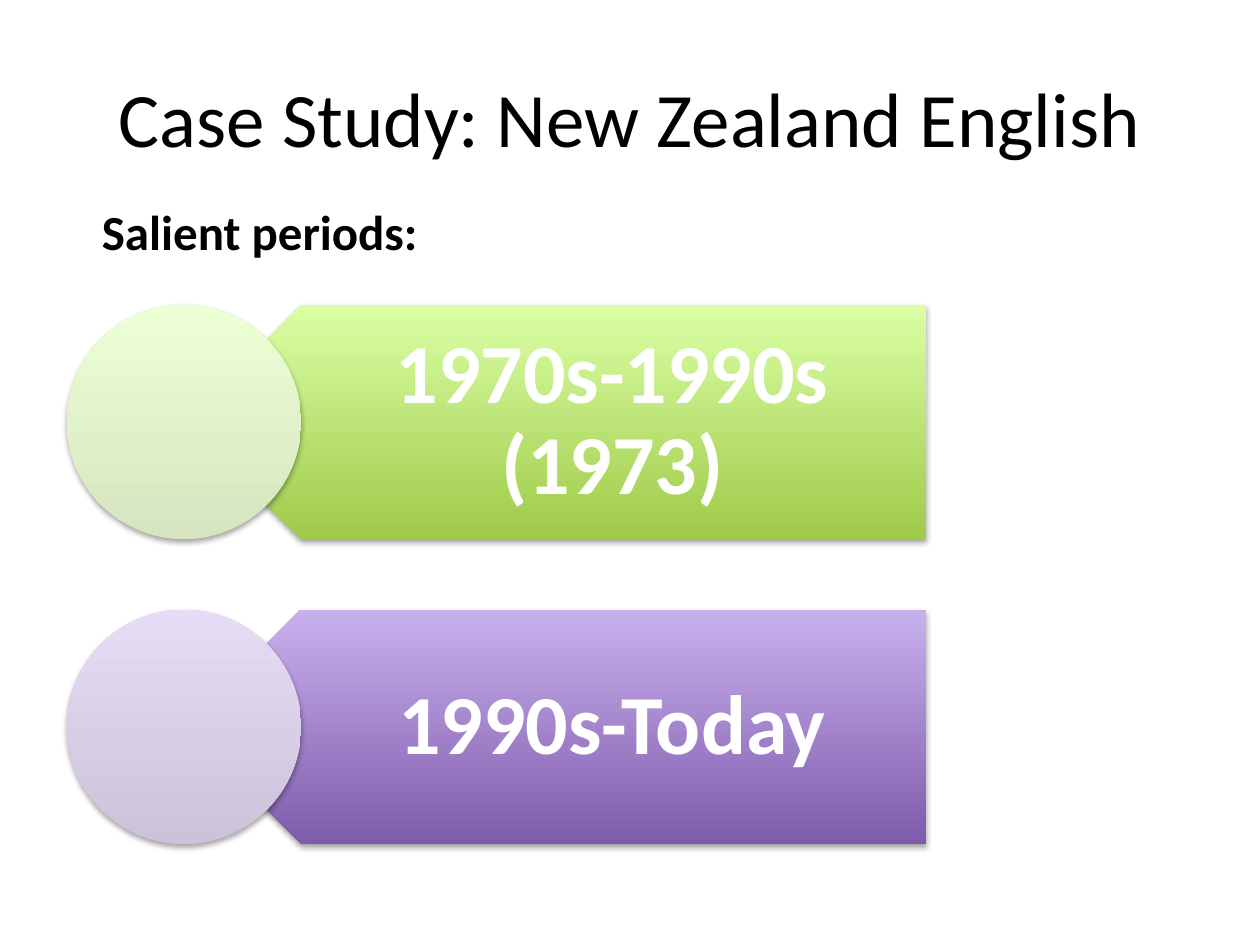
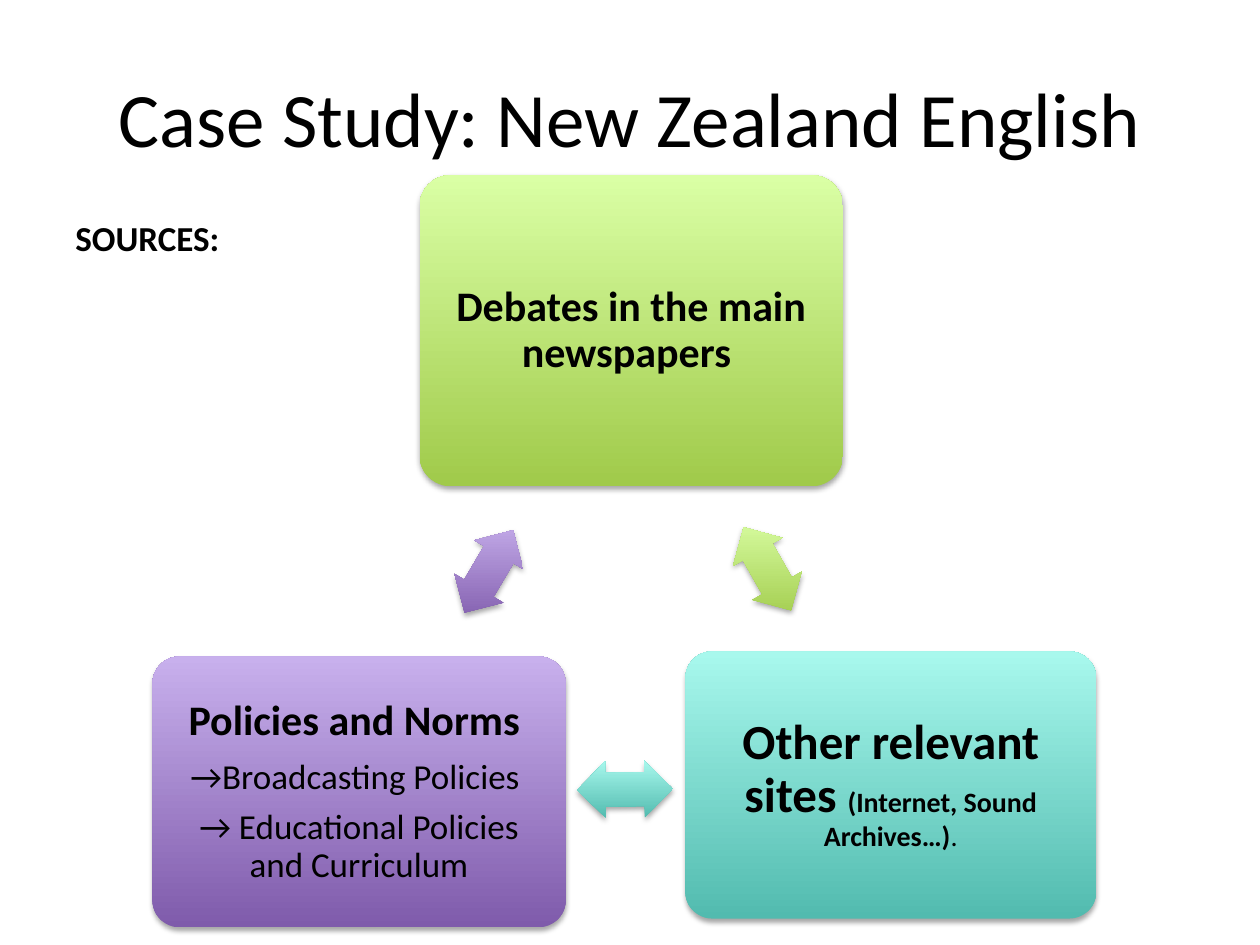
"""Build two slides on New Zealand English: salient periods and sources."""
from lxml.etree import SubElement
from pptx import Presentation
from pptx.dml.color import RGBColor
from pptx.enum.shapes import MSO_SHAPE as Shape
from pptx.enum.text import MSO_ANCHOR as Anchor, PP_ALIGN as Align
from pptx.oxml.ns import qn
from pptx.util import Inches, Pt

TITLE = "Case Study: New Zealand English"
FONT = "Calibri"
COLOURS = {"text": "000000", "light text": "FFFFFF", "shadow": "000000"}
GRADIENTS = {
    "green": ("A0CA4A", "DAFFA5"),
    "purple": ("7F5BAB", "C8B0ED"),
    "teal": ("52BBAF", "A8F8ED"),
    "pale green": ("D6E5BF", "EDFFD5"),
    "pale purple": ("CCC3DA", "E6DCF5"),
}

PERIODS_LABEL = ("Salient periods:", 28, (0.71, 1.55, 8.79, 0.57))
PERIODS = [("1970s-1990s (1973)", "green"), ("1990s-Today", "purple")]
CIRCLE_LEFT, ROW_TOP, ROW_PITCH, ROW_HEIGHT = 0.53, 2.42, 2.42, 1.86
BANNER_WIDTH, BANNER_TEXT_WIDTH = 5.89, 5.43

SOURCES_LABEL = ("SOURCES:", 20, (0.5, 1.67, 2.44, 0.44))
SOURCES = [
    ("green", (3.33, 1.39, 3.36, 2.47), 0.1,
     [[("Debates in the main newspapers ", 24, True)]]),
    ("teal", (5.44, 5.17, 3.26, 2.12), 0.12,
     [[("Other relevant sites ", 28, True),
       ("(Internet, Sound Archives…)", 16, True),
       (".", 16, False)]]),
    ("purple", (1.21, 5.21, 3.28, 2.15), 0.1,
     [[("Policies and Norms ", 24, True)],
      [("→Broadcasting Policies ", 20, False)],
      [("→ Educational Policies and Curriculum", 20, False)]]),
]
ARROW_SIZE = (0.76, 0.45)
ARROWS = [
    ("green", (5.71, 4.29), 60.3),
    ("teal", (4.58, 6.04), 179.2),
    ("purple", (3.5, 4.31), 300.5),
]


def add_shape(slide, kind, box, gradient, rotation=0, adjustments=()):
    """Add a borderless shape with an upright gradient and a soft shadow."""
    shape = slide.shapes.add_shape(kind, *map(Inches, box))
    shape.rotation = rotation
    for index, value in enumerate(adjustments):
        shape.adjustments[index] = value
    shape.fill.gradient()
    shape.fill.gradient_angle = 90
    for stop, colour in zip(shape.fill.gradient_stops, GRADIENTS[gradient]):
        stop.color.rgb = RGBColor.from_string(colour)
    shape.line.fill.background()
    shape.shadow.inherit = False
    properties = shape.element.spPr
    properties.find(qn("a:gradFill")).set("rotWithShape", "0")
    shadow = SubElement(
        properties.find(qn("a:effectLst")), qn("a:outerShdw"),
        blurRad=str(Pt(3.1)), dist=str(Pt(1.8)), dir="5400000", rotWithShape="0")
    colour = SubElement(shadow, qn("a:srgbClr"), val=COLOURS["shadow"])
    SubElement(colour, qn("a:alpha"), val="35000")
    return shape


def set_font(font, size, bold, colour="text"):
    """Apply the shared typeface with a size, weight and colour."""
    font.name, font.size, font.bold = FONT, Pt(size), bold
    font.color.rgb = RGBColor.from_string(COLOURS[colour])


def write_centred(shape, paragraphs, insets, colour="text"):
    """Fill a shape with centred paragraphs given as lists of runs."""
    frame = shape.text_frame
    frame.word_wrap, frame.vertical_anchor = True, Anchor.MIDDLE
    (frame.margin_left, frame.margin_top,
     frame.margin_right, frame.margin_bottom) = map(Inches, insets)
    for index, runs in enumerate(paragraphs):
        paragraph = frame.paragraphs[0] if index == 0 else frame.add_paragraph()
        first_size, first_bold = runs[0][1:]
        paragraph.alignment = Align.CENTER
        paragraph.line_spacing = 0.9
        paragraph.space_after = Pt(0.35 * first_size)
        set_font(paragraph.font, first_size, first_bold, colour)
        for text, size, bold in runs:
            run = paragraph.add_run()
            run.text = text
            if len(runs) > 1:
                set_font(run.font, size, bold, colour)


def add_titled_slide(presentation, label):
    """Add a slide with the shared title and a bold label below it."""
    slide = presentation.slides.add_slide(presentation.slide_layouts[5])
    title = slide.shapes.title
    title.left, title.top, title.width, title.height = map(Inches, (0.5, 0.3, 9, 1.25))
    title.text_frame.text = TITLE
    title.text_frame.vertical_anchor = Anchor.MIDDLE
    paragraph = title.text_frame.paragraphs[0]
    paragraph.alignment = Align.CENTER
    set_font(paragraph.font, 44, False)
    text, size, box = label
    frame = slide.shapes.add_textbox(*map(Inches, box)).text_frame
    frame.word_wrap = True
    frame.text = text
    set_font(frame.paragraphs[0].font, size, True)
    return slide


def build_periods(presentation):
    """Draw one banner with a circle for each period."""
    slide = add_titled_slide(presentation, PERIODS_LABEL)
    banner_left = CIRCLE_LEFT + ROW_HEIGHT / 2
    text_left = banner_left + BANNER_WIDTH - BANNER_TEXT_WIDTH
    for row, (period, gradient) in enumerate(PERIODS):
        top = ROW_TOP + row * ROW_PITCH
        add_shape(slide, Shape.PENTAGON, (banner_left, top, BANNER_WIDTH, ROW_HEIGHT),
                  gradient, 180)
        text_box = slide.shapes.add_textbox(
            *map(Inches, (text_left, top, BANNER_TEXT_WIDTH, ROW_HEIGHT)))
        write_centred(text_box, [[(period, 48, True)]], (0.82, 0.2, 0.37, 0.2), "light text")
        add_shape(slide, Shape.OVAL, (CIRCLE_LEFT, top, ROW_HEIGHT, ROW_HEIGHT),
                  f"pale {gradient}")


def build_sources(presentation):
    """Draw the three sources as cards joined by double arrows."""
    slide = add_titled_slide(presentation, SOURCES_LABEL)
    for gradient, box, inset, paragraphs in SOURCES:
        card = add_shape(slide, Shape.ROUNDED_RECTANGLE, box, gradient, adjustments=(0.1,))
        write_centred(card, paragraphs, [inset] * 4)
    for gradient, corner, rotation in ARROWS:
        add_shape(slide, Shape.LEFT_RIGHT_ARROW, corner + ARROW_SIZE, gradient,
                  rotation, (0.6, 0.5))


def main():
    """Create and save the presentation."""
    presentation = Presentation()
    presentation.slide_width, presentation.slide_height = Inches(10), Inches(7.5)
    build_periods(presentation)
    build_sources(presentation)
    presentation.save("out.pptx")


if __name__ == "__main__":
    main()
